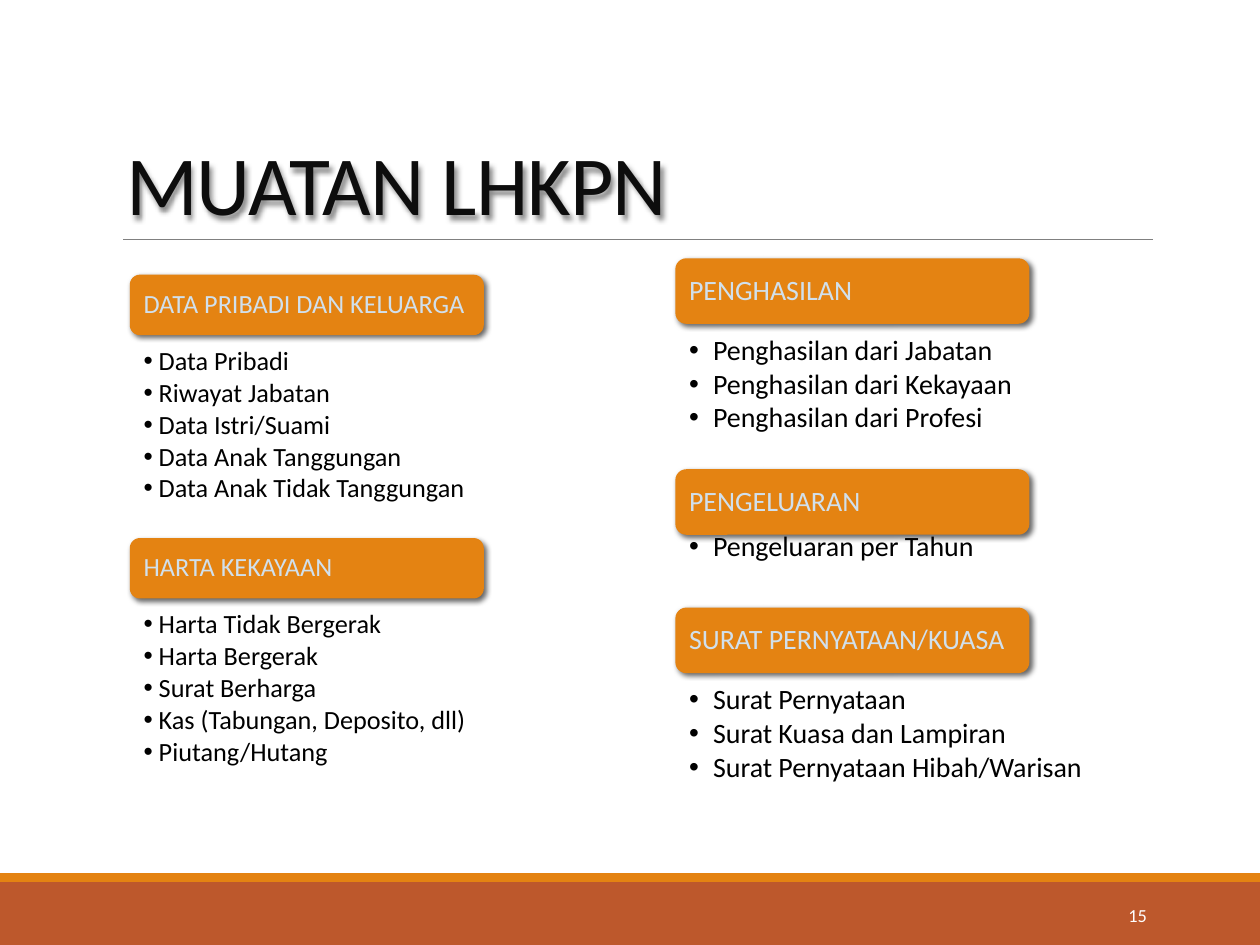
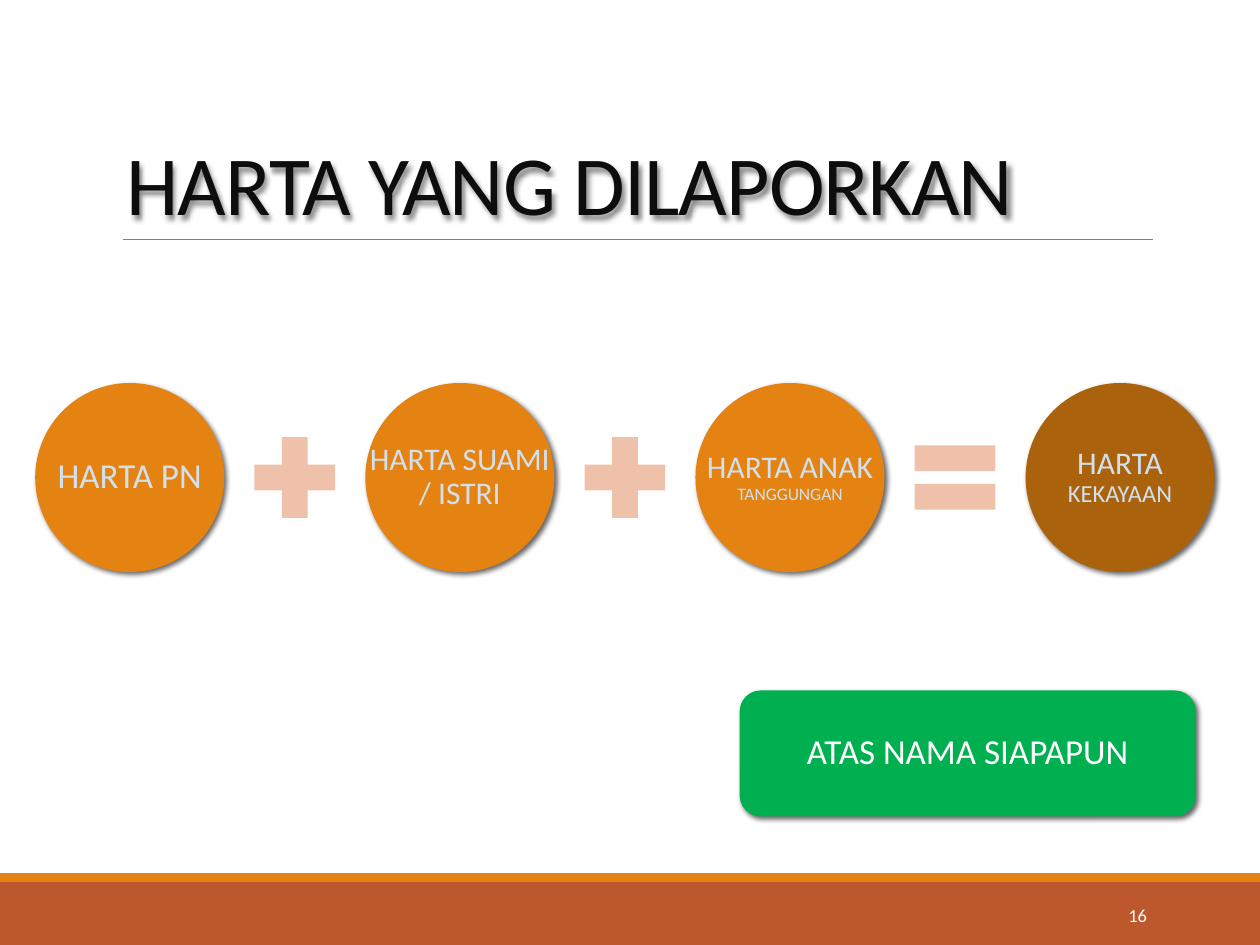
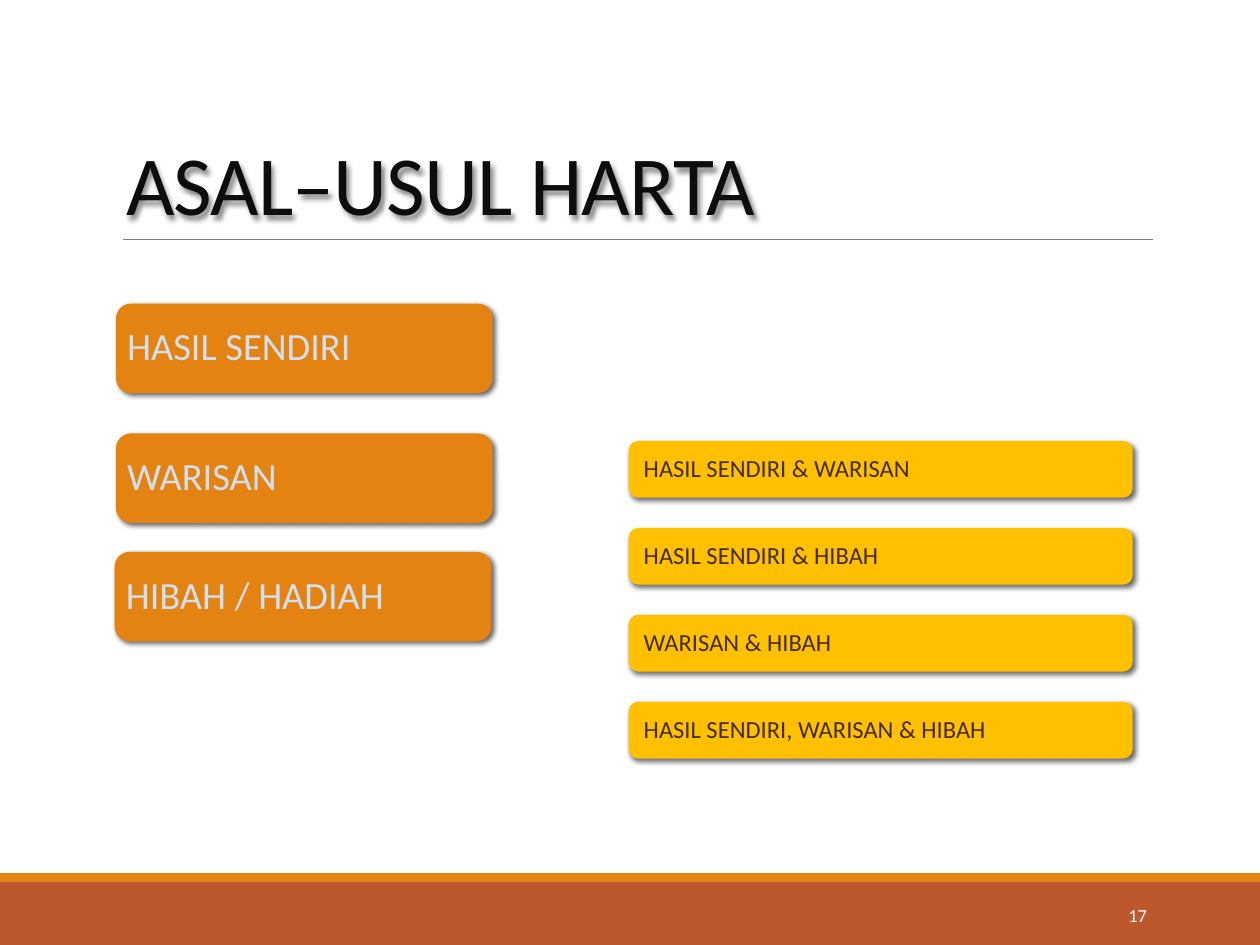
from pptx import Presentation
from pptx import util as u
from pptx.dml.color import RGBColor
from pptx.enum import shapes, text
from pptx.oxml import parse_xml
from pptx.oxml.ns import nsdecls, qn

FONT = "Calibri"
ORANGE = RGBColor(0xE4, 0x83, 0x12)
RUST = RGBColor(0xBD, 0x58, 0x2C)
BROWN = RGBColor(0xAB, 0x62, 0x0D)
PEACH = RGBColor(0xEF, 0xC1, 0xAB)
GREEN = RGBColor(0x00, 0xB0, 0x50)
YELLOW = RGBColor(0xFF, 0xC0, 0x00)
DARK_BROWN = RGBColor(0x43, 0x2B, 0x20)
PALE_BLUE = RGBColor(0xD1, 0xE0, 0xEC)
INK = RGBColor(0x0D, 0x0D, 0x0D)
BLACK = RGBColor(0, 0, 0)
WHITE = RGBColor(255, 255, 255)
GRAY = RGBColor(0x80, 0x80, 0x80)

SHAPE = shapes.MSO_SHAPE
ALIGN = text.PP_ALIGN
MIDDLE = text.MSO_ANCHOR.MIDDLE
WIDTH, HEIGHT = 10, 7.5
FIRST_NUMBER = 15

REPORT_COLUMNS = [
    {"left": 1.03, "top": 2.18, "pill": 0.48, "size": 15, "indent": 0.12, "gap": 0.09, "sections": [
        ("DATA PRIBADI DAN KELUARGA", ["Data Pribadi", "Riwayat Jabatan", "Data Istri/Suami",
                                       "Data Anak Tanggungan", "Data Anak Tidak Tanggungan"]),
        ("HARTA KEKAYAAN", ["Harta Tidak Bergerak", "Harta Bergerak", "Surat Berharga",
                            "Kas (Tabungan, Deposito, dll)", "Piutang/Hutang"]),
    ]},
    {"left": 5.36, "top": 2.05, "pill": 0.52, "size": 16, "indent": 0.19, "gap": 0.1, "sections": [
        ("PENGHASILAN", ["Penghasilan dari Jabatan", "Penghasilan dari Kekayaan",
                         "Penghasilan dari Profesi"]),
        ("PENGELUARAN", ["Pengeluaran per Tahun"]),
        ("SURAT PERNYATAAN/KUASA", ["Surat Pernyataan", "Surat Kuasa dan Lampiran",
                                    "Surat Pernyataan Hibah/Warisan"]),
    ]},
]

# Each circle: fill, its lines with their sizes, and the sign that follows it
WEALTH_SUM = [
    (ORANGE, [("HARTA PN", 20)], SHAPE.MATH_PLUS),
    (ORANGE, [("HARTA SUAMI", 18), ("/ ISTRI", 18)], SHAPE.MATH_PLUS),
    (ORANGE, [("HARTA ANAK", 18), ("TANGGUNGAN", 10)], SHAPE.MATH_EQUAL),
    (BROWN, [("HARTA", 18), ("KEKAYAAN", 14)], None),
]

SINGLE_ORIGINS = [("HASIL SENDIRI", 0.92, 2.41), ("WARISAN", 0.92, 3.44),
                  ("HIBAH / HADIAH", 0.91, 4.38)]
MIXED_ORIGINS = ["HASIL SENDIRI & WARISAN", "HASIL SENDIRI & HIBAH", "WARISAN & HIBAH",
                 "HASIL SENDIRI, WARISAN & HIBAH"]


def inches(*lengths):
    return [u.Inches(length) for length in lengths]


def set_all(target, values):
    for name, value in values.items():
        setattr(target, name, value)


def set_insets(frame, left, top, right, bottom):
    sides = ("margin_left", "margin_top", "margin_right", "margin_bottom")
    set_all(frame, dict(zip(sides, inches(left, top, right, bottom))))


def write(para, words, size, color, align=ALIGN.LEFT, spacing=0.9):
    set_all(para, {"alignment": align, "line_spacing": spacing})
    span = para.add_run()
    span.text = words
    set_all(span.font, {"name": FONT, "size": u.Pt(size)})
    span.font.color.rgb = color
    return span


def add_shadow(shape, opacity=60):
    shape.shadow.inherit = False
    shape.element.spPr.find(qn("a:effectLst")).append(parse_xml(
        f'<a:outerShdw {nsdecls("a")} blurRad="{u.Pt(3)}" dist="{u.Pt(2)}" dir="2700000" '
        f'algn="tl" rotWithShape="0"><a:srgbClr val="000000">'
        f'<a:alpha val="{opacity * 1000}"/></a:srgbClr></a:outerShdw>'))


def add_solid(page, kind, place, fill, shadow=False):
    shape = page.shapes.add_shape(kind, *inches(*place))
    shape.fill.solid()
    shape.fill.fore_color.rgb = fill
    shape.line.fill.background()
    shape.shadow.inherit = False
    if shadow:
        add_shadow(shape)
    return shape


def add_pill(page, place, words, size, inset, fill=ORANGE, color=PALE_BLUE, align=ALIGN.LEFT):
    pill = add_solid(page, SHAPE.ROUNDED_RECTANGLE, place, fill, shadow=True)
    frame = pill.text_frame
    set_all(frame, {"word_wrap": True, "vertical_anchor": MIDDLE})
    # The rounded corner already pushes text in by about 5% of the height
    side = inset - 0.05 * place[3]
    set_insets(frame, side, 0, side, 0)
    write(frame.paragraphs[0], words, size, color, align)


def add_bullets(page, place, items, size, indent, top_inset):
    box = page.shapes.add_textbox(*inches(*place))
    frame = box.text_frame
    frame.word_wrap = True
    set_insets(frame, 0.31, top_inset, 0.31, 0.12)
    for index, item in enumerate(items):
        para = frame.add_paragraph() if index else frame.paragraphs[0]
        write(para, item, size, BLACK)
        para.space_after = u.Pt(2)
        props = para._p.get_or_add_pPr()
        props.set("marL", str(u.Inches(indent)))
        props.set("indent", str(-u.Inches(indent)))
        props.append(parse_xml(f'<a:buFont {nsdecls("a")} typeface="Arial"/>'))
        props.append(parse_xml(f'<a:buChar {nsdecls("a")} char="•"/>'))


def decorate_layout(layout, page):
    """Draw the bands and title rule on a page, then move them to its layout."""
    rule = page.shapes.add_connector(shapes.MSO_CONNECTOR.STRAIGHT, *inches(0.98, 1.9, 9.15, 1.9))
    rule.line.color.rgb = GRAY
    rule.line.width = u.Pt(0.5)
    rule.element.spPr.append(parse_xml(f'<a:effectLst {nsdecls("a")}/>'))
    bands = [add_solid(page, SHAPE.RECTANGLE, (0, top, WIDTH, height), fill)
             for top, height, fill in ((7, 0.5, RUST), (6.93, 0.07, ORANGE))]
    for part in (*bands, rule):
        layout.shapes.element.append(part.element)


def add_page(deck, title):
    layout = deck.slide_layouts[5]
    page = deck.slides.add_slide(layout)
    if len(deck.slides) == 1:
        decorate_layout(layout, page)

    heading = page.shapes.title
    set_all(heading, dict(zip(("left", "top", "width", "height"), inches(0.9, 0.31, 8.25, 1.59))))
    set_all(heading.text_frame, {"word_wrap": True, "auto_size": text.MSO_AUTO_SIZE.NONE,
                                 "vertical_anchor": text.MSO_ANCHOR.BOTTOM})
    span = write(heading.text_frame.paragraphs[0], title, 48, INK, spacing=0.85)
    span._r.get_or_add_rPr().set("spc", "-50")
    add_shadow(heading, opacity=45)

    number = page.shapes.add_textbox(*inches(8.12, 7.06, 1.08, 0.4))
    set_all(number.text_frame, {"word_wrap": True, "vertical_anchor": MIDDLE})
    write(number.text_frame.paragraphs[0], str(FIRST_NUMBER + len(deck.slides) - 1), 10.5,
          WHITE, ALIGN.RIGHT, spacing=1.0)
    return page


def build_report_contents(deck):
    page = add_page(deck, "MUATAN LHKPN")
    for column in REPORT_COLUMNS:
        left, top, pill, size = (column[key] for key in ("left", "top", "pill", "size"))
        for heading, items in column["sections"]:
            panel_top = top + pill / 2
            panel_height = pill - 0.07 + len(items) * size * 0.018
            add_bullets(page, (left - 0.2, panel_top, 4.02, panel_height), items, size,
                        column["indent"], top_inset=0.1 + pill / 2)
            add_pill(page, (left, top, 2.81, pill), heading, size, inset=0.11)
            top = panel_top + panel_height + column["gap"]


def build_wealth_sum(deck):
    page = add_page(deck, "HARTA YANG DILAPORKAN")
    circle_size, sign_size, top, pitch = 1.5, 0.87, 3.04, 2.62
    for index, (fill, lines, sign) in enumerate(WEALTH_SUM):
        left = 0.28 + index * pitch
        circle = add_solid(page, SHAPE.OVAL, (left, top, circle_size, circle_size), fill, shadow=True)
        frame = circle.text_frame
        set_all(frame, {"word_wrap": False, "vertical_anchor": MIDDLE})
        set_insets(frame, 0.03, 0.03, 0.03, 0.03)
        para = frame.paragraphs[0]
        for row, (words, size) in enumerate(lines):
            if row:
                para.add_line_break()
            write(para, words, size, PALE_BLUE, ALIGN.CENTER)
        if sign:
            sign_left = left + (circle_size + pitch - sign_size) / 2
            sign_top = top + (circle_size - sign_size) / 2
            add_solid(page, sign, (sign_left, sign_top, sign_size, sign_size), PEACH)
    add_pill(page, (5.87, 5.48, 3.62, 1), "ATAS NAMA SIAPAPUN", 20, inset=0.1,
             fill=GREEN, color=WHITE, align=ALIGN.CENTER)


def build_wealth_origins(deck):
    page = add_page(deck, "ASAL–USUL HARTA")
    for words, left, top in SINGLE_ORIGINS:
        add_pill(page, (left, top, 2.99, 0.71), words, 22, inset=0.09)
    for row, words in enumerate(MIXED_ORIGINS):
        add_pill(page, (4.99, 3.5 + row * 0.69, 4, 0.45), words, 14, inset=0.12,
                 fill=YELLOW, color=DARK_BROWN)


def main():
    deck = Presentation()
    deck.slide_width, deck.slide_height = inches(WIDTH, HEIGHT)
    build_report_contents(deck)
    build_wealth_sum(deck)
    build_wealth_origins(deck)
    deck.save("out.pptx")


if __name__ == "__main__":
    main()
